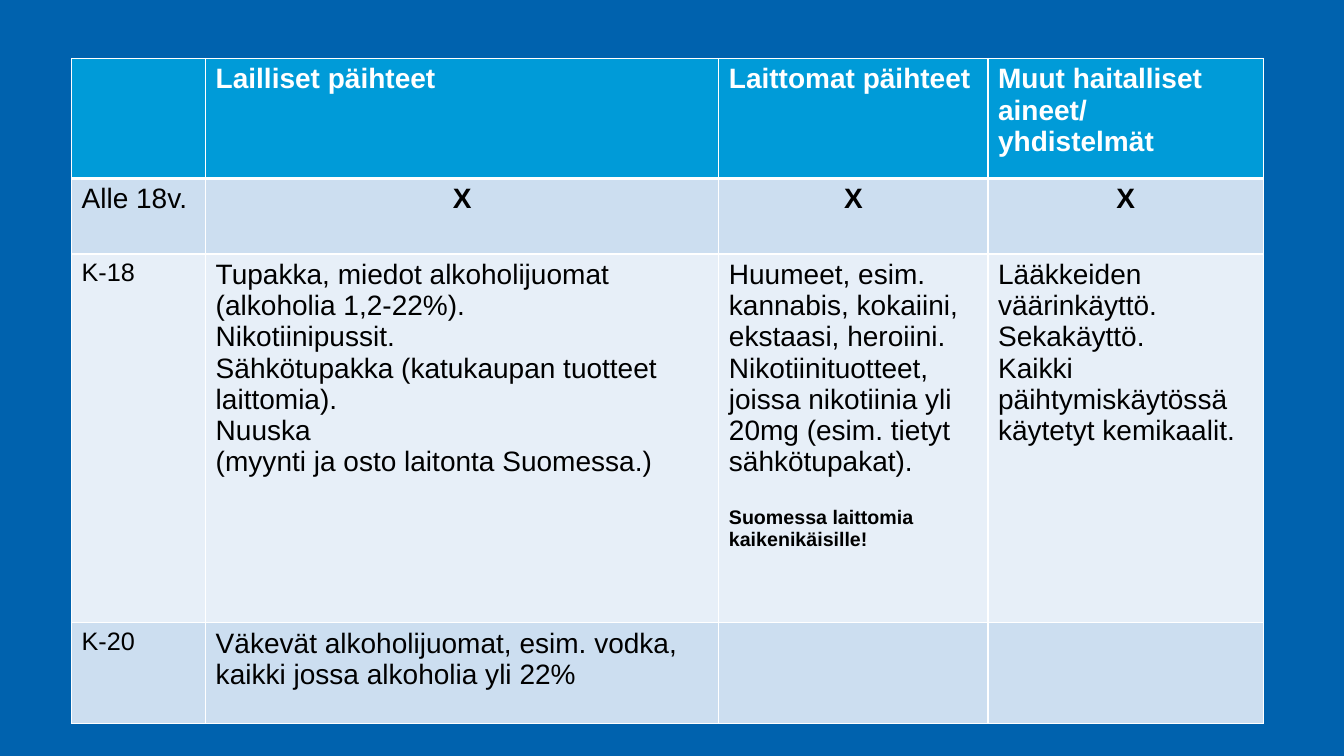
"""Build a slide with a table of legal, illegal and other harmful substances by age."""
from lxml import etree
from pptx import Presentation
from pptx import util as u
from pptx.dml.color import RGBColor
from pptx.enum import text
from pptx.oxml.ns import qn

HUES = {"back": "0062AE", "head": "009BD8", "dark": "CCDEF0",
        "light": "E7EFF8", "white": "FFFFFF", "black": "000000"}
COLS = [1.33, 5.09, 2.67, 2.73]
ROWS = [1.19, 0.75, 3.66, 1]
BANDS = ["head", "dark", "light", "dark"]
CELLS = [
    ["", "Lailliset päihteet", "Laittomat päihteet",
     "Muut haitalliset aineet/\nyhdistelmät"],
    ["Alle 18v.", "X", "X", "X"],
    ["K-18",
     "Tupakka, miedot alkoholijuomat (alkoholia 1,2-22%).\n"
     "Nikotiinipussit.\n"
     "Sähkötupakka (katukaupan tuotteet laittomia).\n"
     "Nuuska\n"
     "(myynti ja osto laitonta Suomessa.)",
     "Huumeet, esim. kannabis, kokaiini, ekstaasi, heroiini.\n"
     "Nikotiinituotteet, joissa nikotiinia yli 20mg (esim. tietyt sähkötupakat).\n"
     "Suomessa laittomia\n"
     "kaikenikäisille!",
     "Lääkkeiden\n"
     "väärinkäyttö.\n"
     "Sekakäyttö.\n"
     "Kaikki päihtymiskäytössä\n"
     "käytetyt kemikaalit."],
    ["K-20", "Väkevät alkoholijuomat, esim. vodka, kaikki jossa alkoholia yli 22%", "", ""],
]
NOTE = ["Suomessa laittomia", "kaikenikäisille!"]


def hue(name):
    return RGBColor.from_string(HUES[name])


def edge(cell, row):
    props = cell._tc.get_or_add_tcPr()
    thick = {"lnB": row == 0, "lnT": row == 1}
    for spot, side in enumerate(["lnL", "lnR", "lnT", "lnB"]):
        line = etree.Element(qn("a:" + side), w=str(u.Pt(3 if thick.get(side) else 1)))
        fill = etree.SubElement(line, qn("a:solidFill"))
        etree.SubElement(fill, qn("a:srgbClr"), val=HUES["white"])
        props.insert(spot, line)


deck = Presentation()
deck.slide_width, deck.slide_height = u.Inches(13.33), u.Inches(7.5)
slide = deck.slides.add_slide(deck.slide_layouts[6])
slide.background.fill.solid()
slide.background.fill.fore_color.rgb = hue("back")

table = slide.shapes.add_table(
    len(ROWS), len(COLS), u.Inches(0.71), u.Inches(0.58),
    u.Inches(sum(COLS)), u.Inches(sum(ROWS))).table
for col, width in zip(table.columns, COLS):
    col.width = u.Inches(width)
for row, height in zip(table.rows, ROWS):
    row.height = u.Inches(height)

for r, words in enumerate(CELLS):
    for c, word in enumerate(words):
        cell = table.cell(r, c)
        cell.fill.solid()
        cell.fill.fore_color.rgb = hue(BANDS[r])
        edge(cell, r)
        cell.text_frame.text = word
        for para in cell.text_frame.paragraphs:
            note = para.text in NOTE
            if para.text == "X":
                para.alignment = text.PP_ALIGN.CENTER
            if para.text == NOTE[0]:
                para.space_before = u.Pt(21)
            for run in para.runs:
                font = run.font
                font.name = "Arial"
                font.size = u.Pt(14 if note else 18 if word.startswith("K-") else 20)
                font.bold = r == 0 or note or word == "X"
                font.color.rgb = hue("black" if r else "white")

deck.save("out.pptx")
